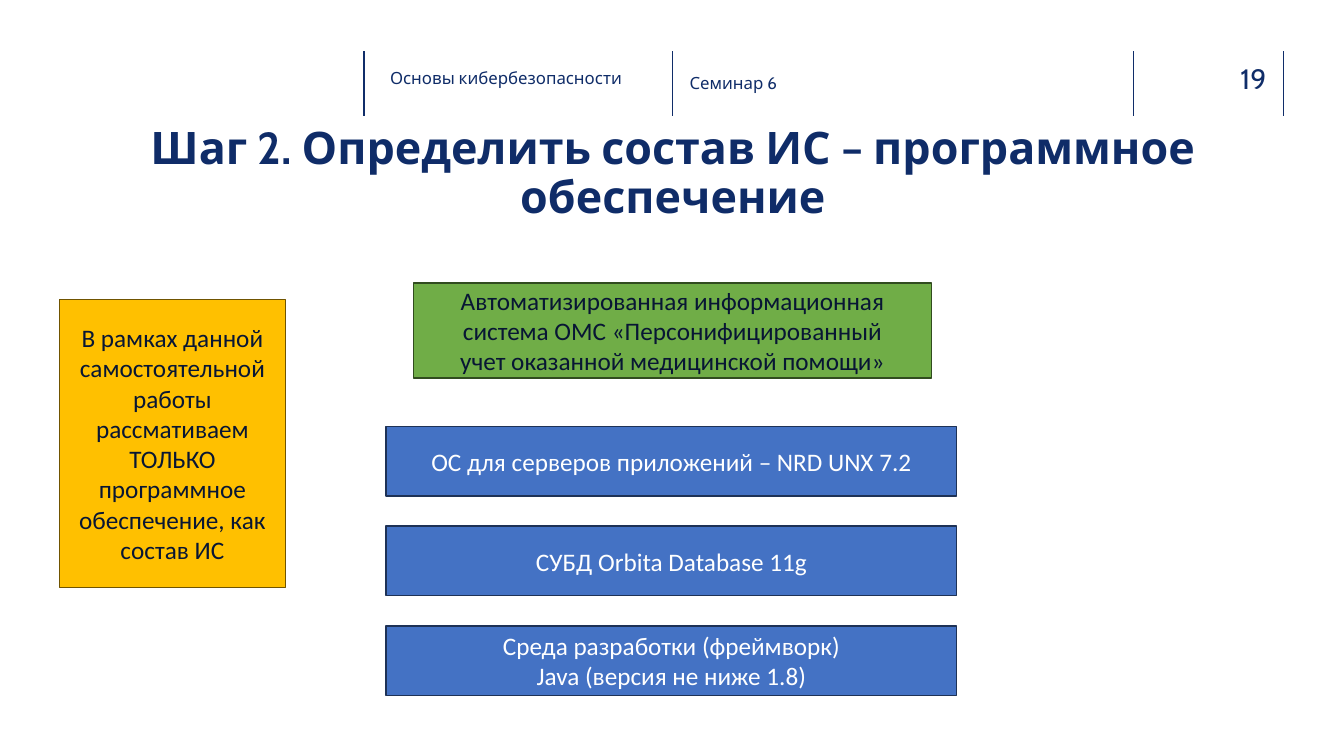
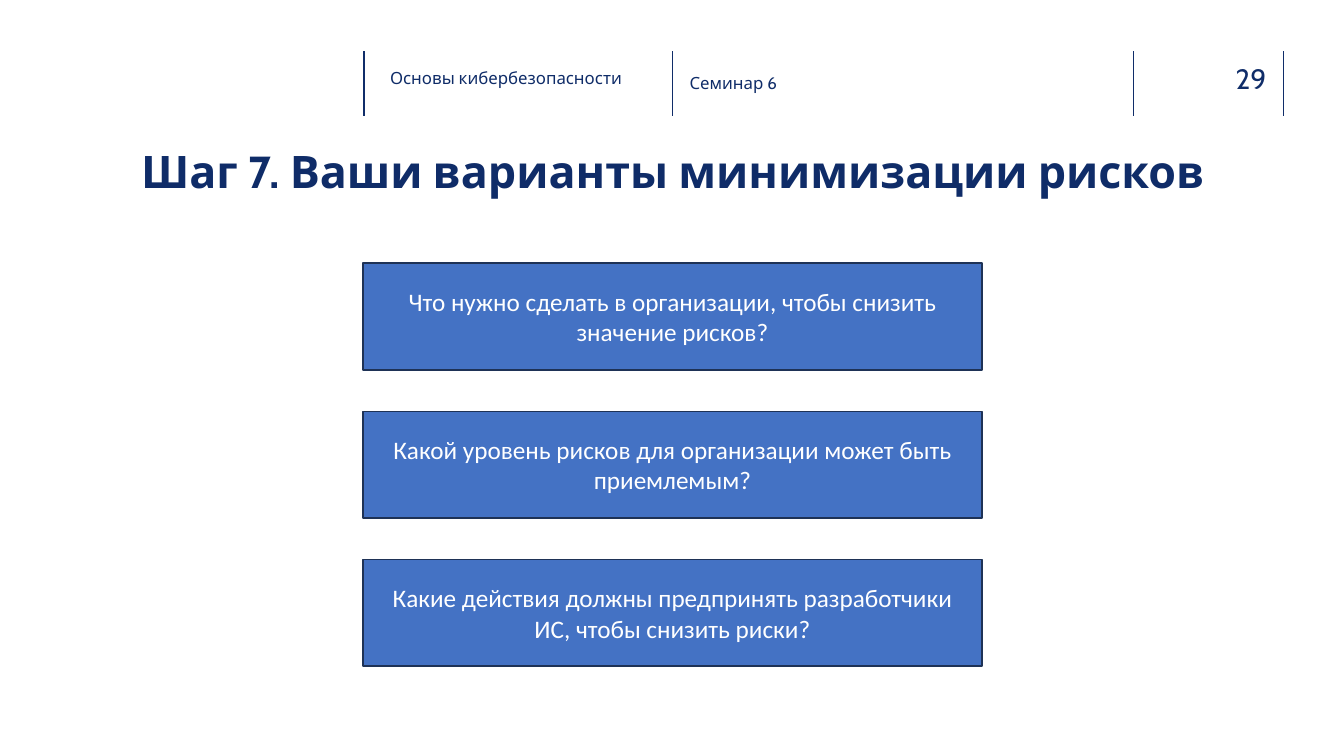
from dataclasses import dataclass

from lxml.etree import SubElement
from pptx import Presentation
from pptx.dml.color import RGBColor
from pptx.enum.shapes import MSO_CONNECTOR, MSO_SHAPE
from pptx.enum.text import MSO_ANCHOR, PP_ALIGN
from pptx.oxml.ns import qn
from pptx.slide import Slide
from pptx.text.text import TextFrame
from pptx.util import Inches, Pt

COLORS = {
    "navy": "0F2C68",
    "rule": "102D69",
    "dark": "081634",
    "white": "FFFFFF",
    "blue": "4472C4",
    "blue_edge": "1E3256",
    "green": "70AD47",
    "green_edge": "314C1F",
    "amber": "FFC000",
    "amber_edge": "705400",
}
HEADING_FONT = "Cabin"
BODY_FONT = "Calibri"
HEADER_RULES = (3.61, 6.67, 11.24, 12.73)


@dataclass(frozen=True)
class Area:
    left: float
    top: float
    width: float
    height: float

    def lengths(self) -> tuple[Inches, ...]:
        return tuple(Inches(n) for n in (self.left, self.top, self.width, self.height))


@dataclass(frozen=True)
class BoxStyle:
    fill: str
    edge: str
    text: str


BLUE = BoxStyle("blue", "blue_edge", "white")
GREEN = BoxStyle("green", "green_edge", "dark")
AMBER = BoxStyle("amber", "amber_edge", "dark")


def color(name: str) -> RGBColor:
    return RGBColor.from_string(COLORS[name])


def write_text(frame: TextFrame, text: str, *, size: float, font: str, ink: str,
               bold: bool = False, align: PP_ALIGN = PP_ALIGN.LEFT,
               anchor: MSO_ANCHOR = MSO_ANCHOR.TOP, spacing: float = 1.0) -> None:
    """Fill a frame; each line of the text becomes a paragraph."""
    frame.word_wrap = True
    frame.vertical_anchor = anchor
    frame.text = text
    for paragraph in frame.paragraphs:
        paragraph.alignment = align
        paragraph.line_spacing = spacing
        for run in paragraph.runs:
            run.font.name = font
            run.font.size = Pt(size)
            run.font.bold = bold
            run.font.color.rgb = color(ink)


def add_label(slide: Slide, area: Area, text: str, *, inset: bool = True, **text_format) -> None:
    frame = slide.shapes.add_textbox(*area.lengths()).text_frame
    if not inset:
        frame.margin_left = frame.margin_right = frame.margin_top = frame.margin_bottom = 0
    write_text(frame, text, font=HEADING_FONT, **text_format)


def add_rule(slide: Slide, left: float) -> None:
    line = slide.shapes.add_connector(
        MSO_CONNECTOR.STRAIGHT, Inches(left), Inches(0.51), Inches(left), Inches(1.15))
    line.line.color.rgb = color("rule")
    line.line.width = Pt(1)
    SubElement(line._element.spPr, qn("a:effectLst"))


def add_box(slide: Slide, area: Area, text: str, style: BoxStyle) -> None:
    shape = slide.shapes.add_shape(MSO_SHAPE.RECTANGLE, *area.lengths())
    shape.shadow.inherit = False
    shape.fill.solid()
    shape.fill.fore_color.rgb = color(style.fill)
    shape.line.color.rgb = color(style.edge)
    shape.line.width = Pt(1)
    write_text(shape.text_frame, text, size=18, font=BODY_FONT, ink=style.text,
               align=PP_ALIGN.CENTER, anchor=MSO_ANCHOR.MIDDLE)


def add_stack(slide: Slide, first: Area, step: float, texts: tuple[str, ...]) -> None:
    """Place equal blue boxes one below another."""
    for index, text in enumerate(texts):
        area = Area(first.left, first.top + index * step, first.width, first.height)
        add_box(slide, area, text, BLUE)


def add_base_slide(presentation: Presentation, number: int, title: str) -> Slide:
    """Add a slide with the shared header and title."""
    slide = presentation.slides.add_slide(presentation.slide_layouts[6])
    for left in HEADER_RULES:
        add_rule(slide, left)
    add_label(slide, Area(11.83, 0.61, 0.73, 0.34), str(number), inset=False,
              size=20, ink="rule", align=PP_ALIGN.RIGHT)
    add_label(slide, Area(3.77, 0.62, 2.66, 0.3), "Основы кибербезопасности",
              size=12, ink="navy")
    add_label(slide, Area(6.84, 0.52, 3.96, 0.61), "Семинар 6", inset=False,
              size=12, ink="rule", anchor=MSO_ANCHOR.MIDDLE)
    add_label(slide, Area(0.59, 1.41, 12.17, 0.64), title, size=32, ink="navy",
              bold=True, align=PP_ALIGN.CENTER, anchor=MSO_ANCHOR.MIDDLE, spacing=0.9)
    return slide


def build_software_slide(presentation: Presentation) -> None:
    slide = add_base_slide(
        presentation, 19, "Шаг 2. Определить состав ИС – программное обеспечение")
    add_box(slide, Area(4.1, 2.81, 5.14, 0.94),
            "Автоматизированная информационная система ОМС «Персонифицированный\n"
            "учет оказанной медицинской помощи»", GREEN)
    add_stack(slide, Area(3.83, 4.23, 5.66, 0.69), 0.99, (
        "ОС для серверов приложений – NRD UNX 7.2",
        "СУБД Orbita Database 11g",
        "Среда разработки (фреймворк)\nJava (версия не ниже 1.8)",
    ))
    add_box(slide, Area(0.59, 2.97, 2.24, 2.86),
            "В рамках данной самостоятельной работы рассмативаем ТОЛЬКО "
            "программное обеспечение, как состав ИС", AMBER)


def build_risk_slide(presentation: Presentation) -> None:
    slide = add_base_slide(presentation, 29, "Шаг 7. Ваши варианты минимизации рисков")
    add_stack(slide, Area(3.6, 2.61, 6.14, 1.06), 1.47, (
        "Что нужно сделать в организации, чтобы снизить значение рисков?",
        "Какой уровень рисков для организации может быть приемлемым?",
        "Какие действия должны предпринять разработчики ИС, чтобы снизить риски?",
    ))


def main() -> None:
    presentation = Presentation()
    presentation.slide_width = Inches(13.33)
    presentation.slide_height = Inches(7.5)
    build_software_slide(presentation)
    build_risk_slide(presentation)
    presentation.save("out.pptx")


if __name__ == "__main__":
    main()
